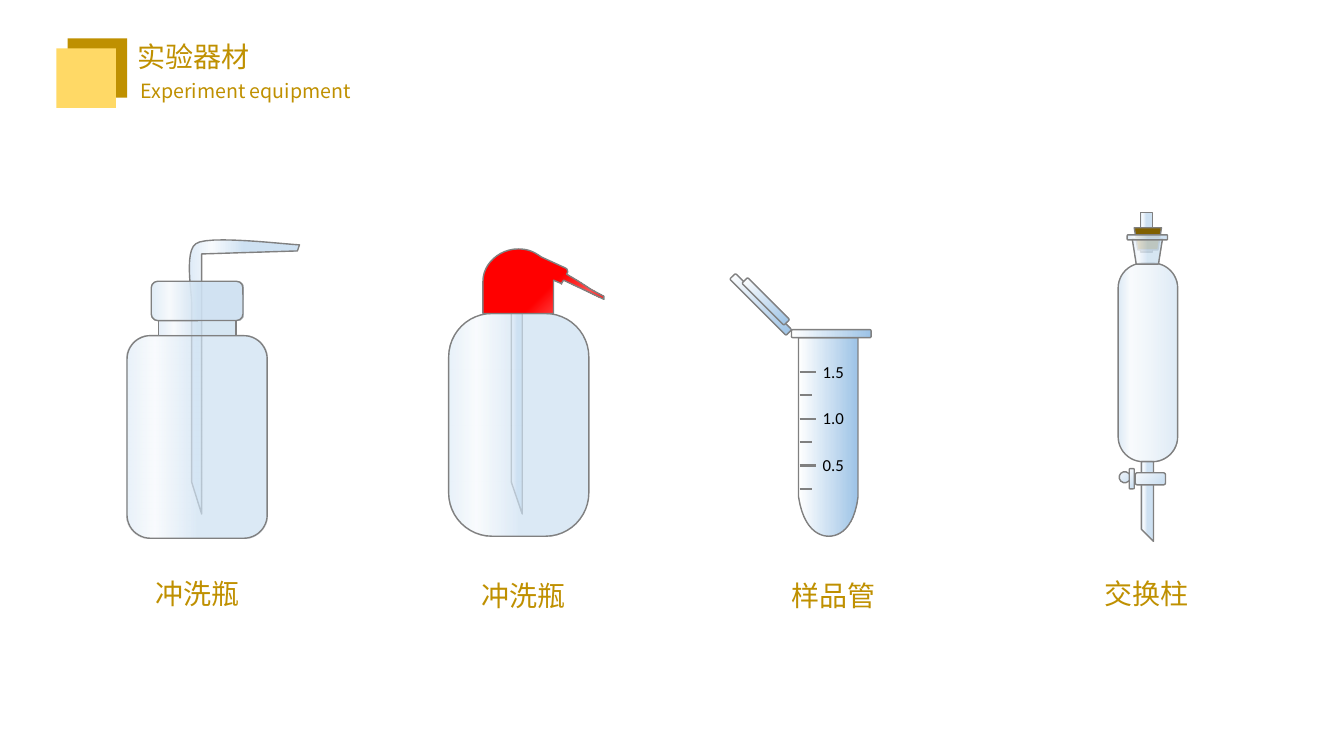
from dataclasses import dataclass

from lxml import etree
from pptx import Presentation
from pptx import util as u
from pptx.dml.color import RGBColor
from pptx.enum import shapes, text
from pptx.oxml.ns import qn


@dataclass(frozen=True)
class Theme:
    gold: str = "BF9000"
    pale_gold: str = "FFD966"
    outline: str = "808080"
    cork: str = "806000"
    black: str = "000000"
    cjk: str = "Noto Sans CJK SC"
    title_font: str = "Arial"
    scale_font: str = "Calibri"
    heading: int = 20
    subtitle: int = 14
    scale: int = 12
    # Gradient stops: position in percent, colour
    glass: tuple = ((0, "DEEBF7"), (20, "F7FAFD"), (50, "CEE1F2"))
    plastic: tuple = ((0, "FFFFFF"), (100, "9DC3E6"))
    red: tuple = ((0, "FF0000"), (20, "FF5050"), (44, "FF0000"))
    valve: tuple = ((0, "F7FAFD"), (86, "CEE1F2"))


T = Theme()
SHAPE = shapes.MSO_SHAPE
TOP_LEFT = (0, 0, 100, 100)
BOTTOM_RIGHT = (100, 100, 0, 0)


def glass(opacity):
    return tuple((pos, color, opacity) for pos, color in T.glass)


def paint_gradient(sp, stops, focus=None):
    """Stops may carry an opacity; a focus makes the gradient circular."""
    sp.fill.gradient()
    grad = sp._element.spPr.find(qn("a:gradFill"))
    for child in list(grad):
        grad.remove(child)
    gs_list = etree.SubElement(grad, qn("a:gsLst"))
    for pos, color, *opacity in stops:
        gs = etree.SubElement(gs_list, qn("a:gs"), {"pos": str(pos * 1000)})
        clr = etree.SubElement(gs, qn("a:srgbClr"), {"val": color})
        for value in opacity:
            etree.SubElement(clr, qn("a:alpha"), {"val": str(value * 1000)})
    if focus:
        circle = etree.SubElement(grad, qn("a:path"), {"path": "circle"})
        etree.SubElement(circle, qn("a:fillToRect"),
                         {side: str(v * 1000) for side, v in zip("ltrb", focus)})
    else:
        etree.SubElement(grad, qn("a:lin"), {"ang": "0", "scaled": "0"})


def paint(sp, fill, focus=None, outlined=True):
    sp.shadow.inherit = False
    if isinstance(fill, str):
        sp.fill.solid()
        sp.fill.fore_color.rgb = RGBColor.from_string(fill)
    else:
        paint_gradient(sp, fill, focus)
    if outlined:
        sp.line.color.rgb = RGBColor.from_string(T.outline)
        sp.line.width = u.Pt(1)
    else:
        sp.line.fill.background()


def add_part(parent, kind, box, fill, adj=None, rotation=0, flip=False,
             focus=None, outlined=True):
    sp = parent.add_shape(kind, *map(u.Inches, box))
    if adj is not None:
        sp.adjustments[0] = adj
    sp.rotation = rotation
    if flip:
        sp._element.spPr.xfrm.set("flipV", "1")
    paint(sp, fill, focus, outlined)


def bezier(p0, p1, p2, p3, steps=12):
    for i in range(1, steps + 1):
        t = i / steps
        weights = ((1 - t) ** 3, 3 * t * (1 - t) ** 2, 3 * t * t * (1 - t), t ** 3)
        yield tuple(sum(w * p[axis] for w, p in zip(weights, (p0, p1, p2, p3)))
                    for axis in (0, 1))


def add_outline(parent, segments, fill, focus=None):
    """Segments are points (x, y) or curves (x1, y1, x2, y2, x, y)."""
    points = [segments[0]]
    for seg in segments[1:]:
        if len(seg) == 2:
            points.append(seg)
        else:
            points.extend(bezier(points[-1], seg[:2], seg[2:4], seg[4:]))
    emu = [(u.Inches(x), u.Inches(y)) for x, y in points]
    builder = parent.build_freeform(*emu[0])
    builder.add_line_segments(emu[1:], close=True)
    paint(builder.convert_to_shape(), fill, focus)


def add_tick(parent, x, y, length):
    line = parent.add_connector(shapes.MSO_CONNECTOR.STRAIGHT,
                                *map(u.Inches, (x, y, x + length, y)))
    line.line.color.rgb = RGBColor.from_string(T.outline)
    line.line.width = u.Pt(1.5)
    etree.SubElement(line._element.spPr, qn("a:effectLst"))


def write(sp, words, size, font, color, wrap):
    tf = sp.text_frame
    tf.text = words
    tf.word_wrap = wrap
    tf.auto_size = text.MSO_AUTO_SIZE.SHAPE_TO_FIT_TEXT
    tf.vertical_anchor = text.MSO_ANCHOR.TOP
    p = tf.paragraphs[0]
    p.alignment = text.PP_ALIGN.LEFT
    p.font.size = u.Pt(size)
    p.font.name = font
    p.font.color.rgb = RGBColor.from_string(color)


def add_label(parent, words, box, size=T.heading, font=T.cjk, color=T.gold, wrap=False):
    write(parent.add_textbox(*map(u.Inches, box)), words, size, font, color, wrap)


def add_header(s):
    for box, color in (((0.67, 0.38, 0.59, 0.59), T.gold),
                       ((0.56, 0.48, 0.59, 0.59), T.pale_gold)):
        add_part(s.shapes, SHAPE.RECTANGLE, box, color, outlined=False)
    title = s.shapes.title
    title.left, title.top, title.width, title.height = map(
        u.Inches, (1.26, 0.34, 3.8, 0.44))
    write(title, "实验器材", T.heading, T.title_font, T.gold, True)
    add_label(s.shapes, " Experiment equipment", (1.25, 0.73, 2.58, 0.34),
              T.subtitle, wrap=True)


def add_bent_tube_bottle(g):
    add_outline(g, [(1.94, 2.42), (2.05, 2.33, 2.79, 2.42, 2.97, 2.43), (2.95, 2.49),
                    (2, 2.52), (2, 5.1), (1.9, 4.78), (1.9, 3),
                    (1.9, 2.89, 1.83, 2.5, 1.94, 2.42)], T.glass)
    add_part(g, SHAPE.ROUNDED_RECTANGLE, (1.26, 3.33, 1.39, 2.01), glass(70))
    add_part(g, SHAPE.TRAPEZOID, (1.57, 3.18, 0.77, 0.15), glass(80), adj=0, flip=True)
    add_part(g, SHAPE.ROUNDED_RECTANGLE, (1.5, 2.79, 0.91, 0.39), glass(90))


def add_red_cap_bottle(g):
    add_outline(g, [(5.07, 2.94), (5.18, 2.94), (5.18, 5.1), (5.07, 4.78)], T.glass)
    add_part(g, SHAPE.ROUNDED_RECTANGLE, (4.45, 3.11, 1.39, 2.21), glass(70), adj=0.31)
    add_outline(g, [(5.14, 2.47), (5.22, 2.47, 5.28, 2.49, 5.34, 2.53), (5.37, 2.55),
                    (5.61, 2.66), (5.63, 2.67, 5.63, 2.69, 5.63, 2.7), (5.62, 2.72),
                    (5.67, 2.75), (5.74, 2.79, 5.8, 2.83, 5.86, 2.87), (5.99, 2.94),
                    (5.99, 2.97), (5.59, 2.78), (5.57, 2.81),
                    (5.57, 2.83, 5.57, 2.81, 5.56, 2.81), (5.49, 2.78), (5.49, 3.11),
                    (4.79, 3.11), (4.79, 2.79), (4.79, 2.62, 4.95, 2.47, 5.14, 2.47)],
                T.red, BOTTOM_RIGHT)


def add_sample_tube(g):
    add_outline(g, [(7.92, 3.35), (8.51, 3.35), (8.51, 4.93),
                    (8.47, 5.25, 8.32, 5.32, 8.22, 5.32),
                    (8.12, 5.32, 7.97, 5.25, 7.92, 4.93)], T.plastic)
    # Lid, rim and lid plug
    for box, rotation in (((7.15, 2.98, 0.79, 0.08), 45),
                          ((7.85, 3.27, 0.79, 0.08), 0),
                          ((7.3, 2.95, 0.59, 0.08), 45)):
        add_part(g, SHAPE.ROUNDED_RECTANGLE, box, T.plastic, rotation=rotation)
    # Scale: long ticks carry the values
    for i in range(6):
        add_tick(g, 7.93, 3.69 + i * 0.232, 0.12 if i % 2 else 0.16)
    for i, value in enumerate(("1.5", "1.0", "0.5")):
        add_label(g, value, (8.06, 3.54 + i * 0.46, 0.42, 0.3),
                  T.scale, T.scale_font, T.black)


def add_exchange_column(g):
    # Inlet, stopper and column
    add_part(g, SHAPE.RECTANGLE, (11.31, 2.11, 0.12, 0.39), T.glass)
    add_part(g, SHAPE.TRAPEZOID, (11.25, 2.26, 0.27, 0.22), T.cork, adj=0.16, flip=True)
    column = ((0, "DEEBF7"), (80, "F7FAFD", 70), (100, "CEE1F2", 70))
    add_part(g, SHAPE.ROUNDED_RECTANGLE, (11.09, 2.61, 0.59, 1.97), column,
             adj=0.42, rotation=180)
    # Outlet and valve
    add_outline(g, [(11.32, 4.58), (11.44, 4.58), (11.44, 5.37), (11.32, 5.25)], T.glass)
    for kind, box, rotation in (
            (SHAPE.TEAR, (11.1, 4.68, 0.11, 0.11), 45),
            (SHAPE.ROUNDED_RECTANGLE, (11.26, 4.69, 0.3, 0.12), 0),
            (SHAPE.ROUNDED_RECTANGLE, (11.2, 4.65, 0.05, 0.2), 0)):
        add_part(g, kind, box, T.valve, rotation=rotation, focus=TOP_LEFT)
    # Neck and rim
    add_part(g, SHAPE.TRAPEZOID, (11.23, 2.37, 0.3, 0.25), glass(80), adj=0.16, flip=True)
    add_part(g, SHAPE.ROUNDED_RECTANGLE, (11.18, 2.33, 0.4, 0.05), glass(90))


def main():
    prs = Presentation()
    prs.slide_width, prs.slide_height = u.Inches(13.33), u.Inches(7.5)
    s = prs.slides.add_slide(prs.slide_layouts[5])
    add_header(s)
    for draw, name, x, y in ((add_bent_tube_bottle, "冲洗瓶", 1.44, 5.67),
                             (add_red_cap_bottle, "冲洗瓶", 4.68, 5.69),
                             (add_sample_tube, "样品管", 7.75, 5.69),
                             (add_exchange_column, "交换柱", 10.86, 5.67)):
        draw(s.shapes.add_group_shape().shapes)
        add_label(s.shapes, name, (x, y, 1.04, 0.44))
    prs.save("out.pptx")


if __name__ == "__main__":
    main()
